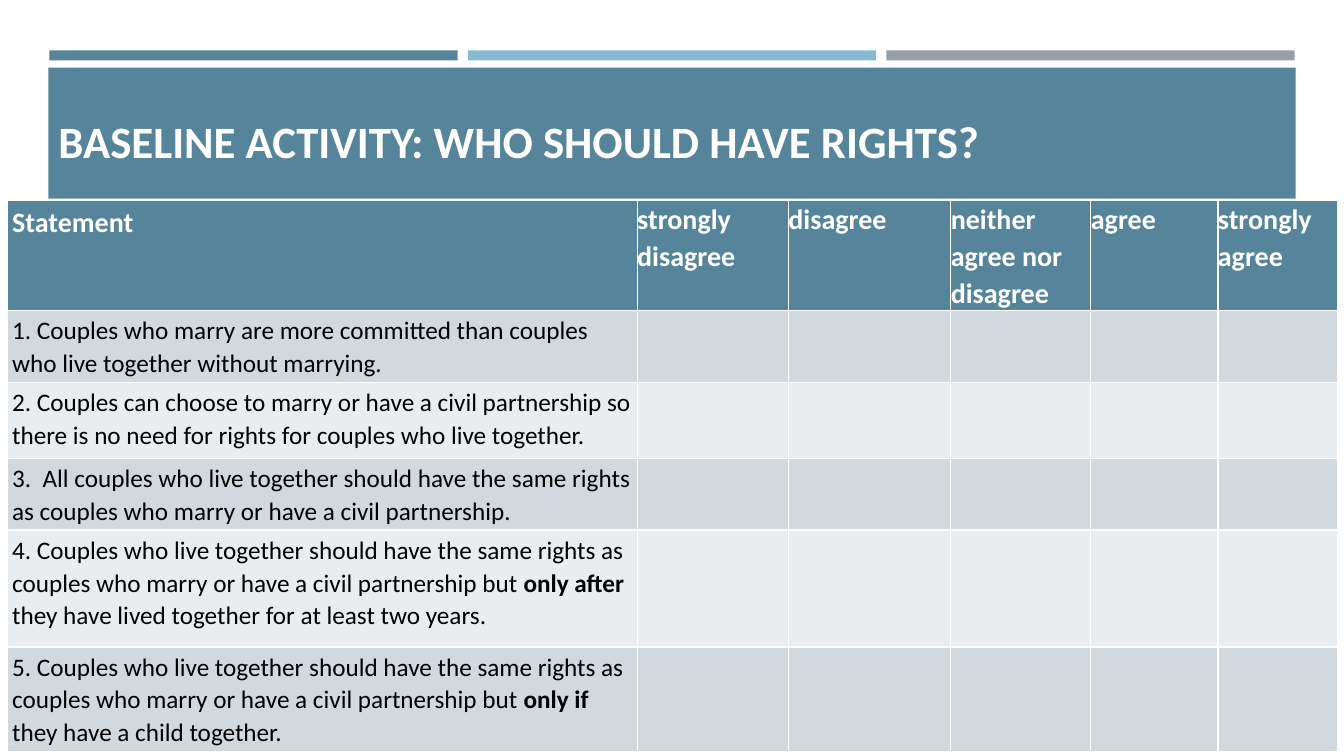
from dataclasses import dataclass

from pptx import Presentation
from pptx.dml.color import RGBColor
from pptx.enum.shapes import MSO_SHAPE
from pptx.enum.text import MSO_ANCHOR, PP_ALIGN
from pptx.util import Inches, Pt

RECTANGLE = MSO_SHAPE.RECTANGLE
BOTTOM = MSO_ANCHOR.BOTTOM
LEFT = PP_ALIGN.LEFT
TITLE_ONLY = 5


@dataclass(frozen=True)
class Theme:
    font: str = "Calibri"
    teal: str = "56859B"
    sky: str = "89B9D3"
    grey: str = "969FA7"
    bands: tuple = ("D1D9DE", "E9EDEF")
    white: str = "FFFFFF"
    black: str = "000000"
    title_size: int = 32
    header_size: int = 20
    body_size: int = 18


THEME = Theme()

TITLE = "BASELINE ACTIVITY: WHO SHOULD HAVE RIGHTS?"
HEADERS = ["Statement", "strongly disagree", "disagree",
           "neither agree nor disagree", "agree", "strongly agree"]
SAME_RIGHTS = ("Couples who live together should have the same rights as "
               "couples who marry or have a civil partnership but ")
# Each statement is a list of (text, bold) runs.
STATEMENTS = [
    [("1. Couples who marry are more committed than couples who live "
      "together without marrying.", False)],
    [("2. Couples can choose to marry or have a civil partnership so there "
      "is no need for rights for couples who live together.", False)],
    [("3.  All couples who live together should have the same rights as "
      "couples who marry or have a civil partnership.", False)],
    [("4. " + SAME_RIGHTS, False), ("only after", True),
     (" they have lived together for at least two years.", False)],
    [("5. " + SAME_RIGHTS, False), ("only if", True),
     (" they have a child together.", False)],
]
COLUMN_WIDTHS = [6.25, 1.5, 1.61, 1.39, 1.26, 1.19]
ROW_HEIGHTS = [1.07, 0.7, 0.75, 0.7, 1.16, 1.01]


def add_bar(s, left, top, width, height, color):
    bar = s.shapes.add_shape(RECTANGLE, Inches(left), Inches(top),
                             Inches(width), Inches(height))
    bar.shadow.inherit = False
    bar.fill.solid()
    bar.fill.fore_color.rgb = RGBColor.from_string(color)
    bar.line.fill.background()


def add_run(p, text, size, color, bold):
    r = p.add_run()
    r.text = text
    r.font.name = THEME.font
    r.font.size = Pt(size)
    r.font.bold = bold
    r.font.color.rgb = RGBColor.from_string(color)


def add_title(s):
    title = s.shapes.title
    title.left, title.top = Inches(0.48), Inches(0.13)
    title.width, title.height = Inches(12.16), Inches(1.58)
    tf = title.text_frame
    tf.vertical_anchor = BOTTOM
    p = tf.paragraphs[0]
    p.alignment = LEFT
    add_run(p, TITLE, THEME.title_size, THEME.white, True)
    s.shapes._spTree.append(title._element)  # in front of the banner


def set_margins(cell, side, vertical):
    cell.margin_left = cell.margin_right = Inches(side)
    cell.margin_top = cell.margin_bottom = Inches(vertical)


def fill_cell(cell, color):
    cell.fill.solid()
    cell.fill.fore_color.rgb = RGBColor.from_string(color)


def write_cell(cell, runs, size, color, space_after=0):
    p = cell.text_frame.paragraphs[0]
    p.line_spacing = 1.07
    p.space_after = Pt(space_after)
    for text, bold in runs:
        add_run(p, text, size, color, bold)


def add_survey_table(s):
    frame = s.shapes.add_table(
        len(ROW_HEIGHTS), len(COLUMN_WIDTHS), Inches(0.07), Inches(1.99),
        Inches(sum(COLUMN_WIDTHS)), Inches(sum(ROW_HEIGHTS)))
    table = frame.table
    for column, width in zip(table.columns, COLUMN_WIDTHS):
        column.width = Inches(width)
    for row, height in zip(table.rows, ROW_HEIGHTS):
        row.height = Inches(height)

    for i, header in enumerate(HEADERS):
        cell = table.cell(0, i)
        fill_cell(cell, THEME.teal)
        set_margins(cell, 0, 0)
        write_cell(cell, [(header, True)], THEME.header_size, THEME.white, 8)

    for i, runs in enumerate(STATEMENTS):
        for j in range(len(HEADERS)):
            fill_cell(table.cell(i + 1, j), THEME.bands[i % 2])
        write_cell(table.cell(i + 1, 0), runs, THEME.body_size, THEME.black)

    for i in range(len(ROW_HEIGHTS)):
        set_margins(table.cell(i, 0), 0.05, 0.03)


def main():
    prs = Presentation()
    prs.slide_width, prs.slide_height = Inches(13.33), Inches(7.5)
    s = prs.slides.add_slide(prs.slide_layouts[TITLE_ONLY])
    for i, color in enumerate([THEME.teal, THEME.sky, THEME.grey]):
        add_bar(s, 0.49 + 4.15 * i, 0.5, 4.05, 0.1, color)
    add_bar(s, 0.48, 0.67, 12.37, 1.3, THEME.teal)
    add_title(s)
    add_survey_table(s)
    prs.save("out.pptx")


if __name__ == "__main__":
    main()
